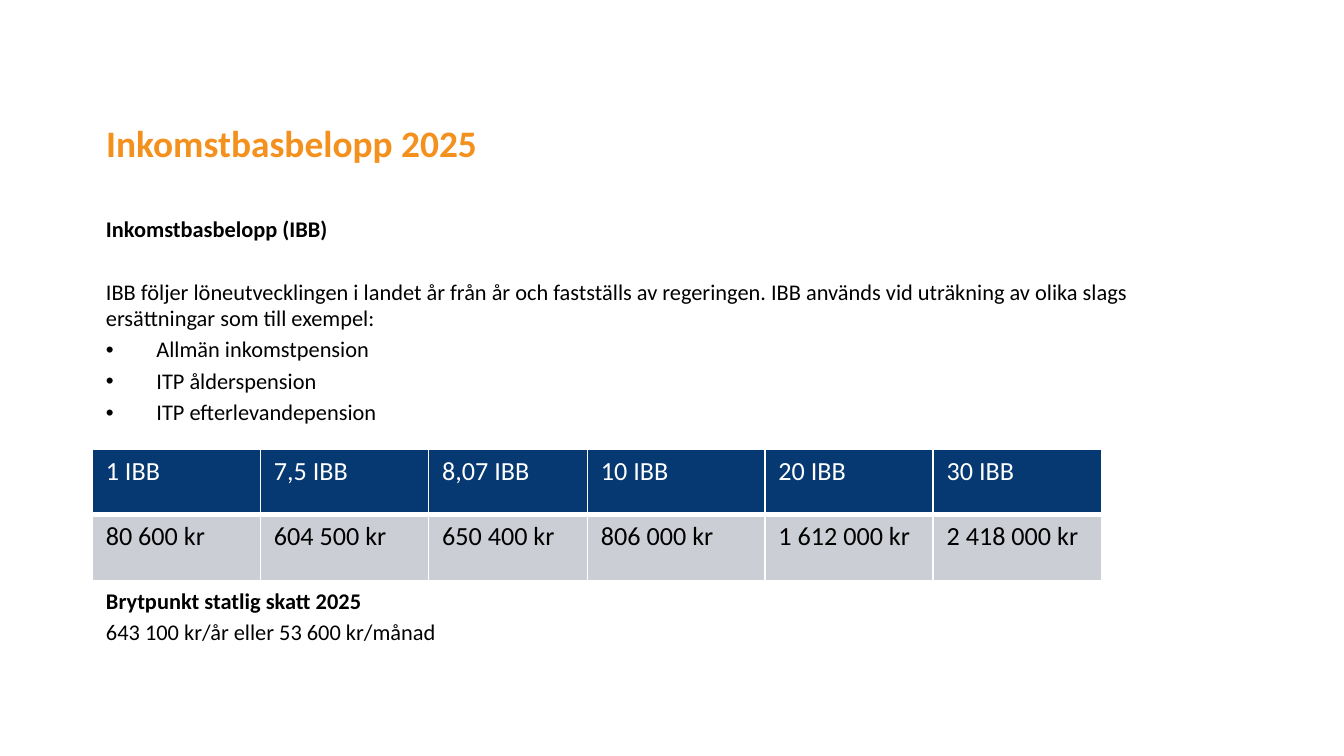
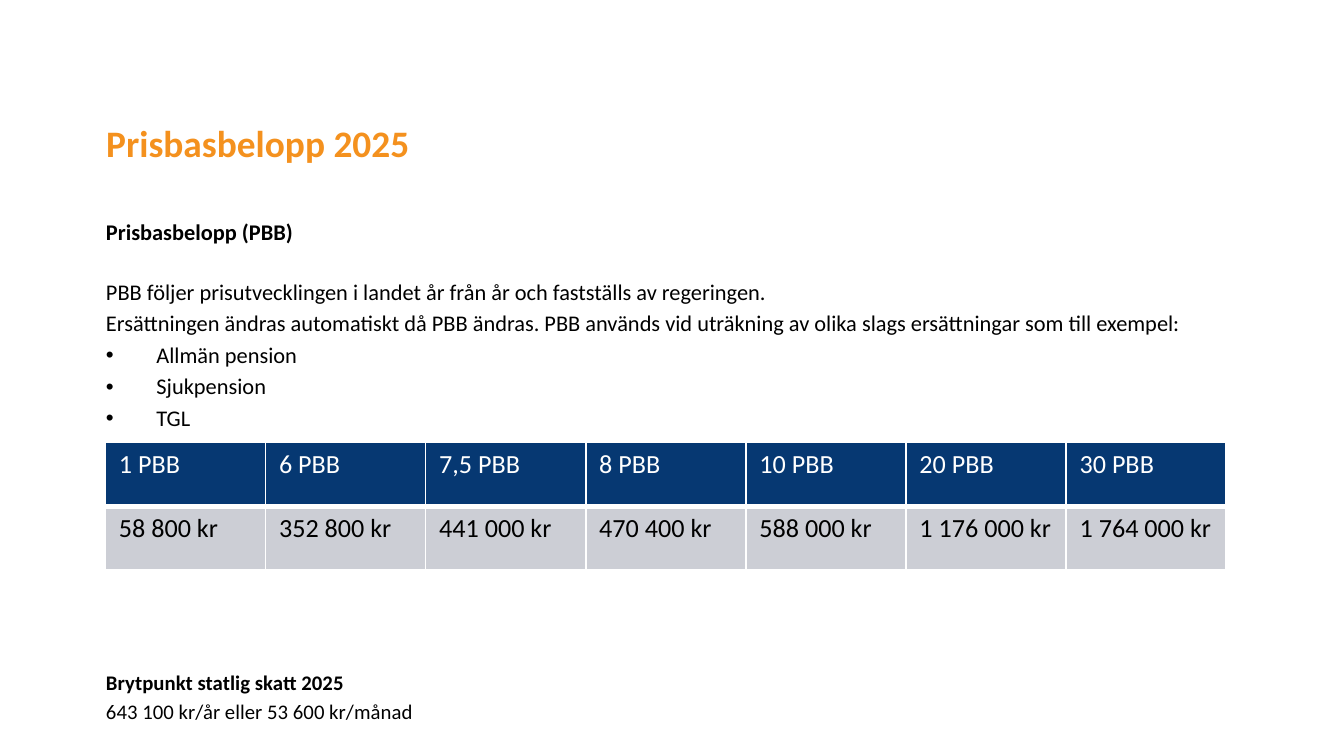
from pptx import Presentation
from pptx.dml.color import RGBColor
from pptx.enum import text as t
from pptx.oxml import parse_xml
from pptx.oxml.ns import nsdecls
from pptx.util import Pt

FONT = "Calibri"
ORANGE, NAVY, GREY, BLACK, WHITE = "F4911E", "063872", "CCCED5", "000000", "FFFFFF"
LEFT, WIDTH = 49.7, 620.6
INDENT = 27
LINE_SPACING = 0.97
TITLE_ONLY = 5
TAX_HEADING = "Brytpunkt statlig skatt 2025"
TAX_LIMIT = "643 100 kr/år eller 53 600 kr/månad"


def rgb(value):
    return RGBColor.from_string(value)


def set_font(font, size, color, bold=False):
    for name, value in dict(name=FONT, size=Pt(size), bold=bold).items():
        setattr(font, name, value)
    font.color.rgb = rgb(color)


def add_title(s, title):
    sp = s.shapes.title
    box = dict(left=LEFT, top=60.8, width=WIDTH, height=36.7)
    for name, value in box.items():
        setattr(sp, name, Pt(value))
    tf = sp.text_frame
    tf.text = title
    tf.vertical_anchor = t.MSO_ANCHOR.TOP
    tf.auto_size = t.MSO_AUTO_SIZE.NONE
    p = tf.paragraphs[0]
    p.alignment = t.PP_ALIGN.LEFT
    set_font(p.runs[0].font, 20, ORANGE, bold=True)


def add_bullet(p):
    pPr = p._p.get_or_add_pPr()
    pPr.set("marL", str(Pt(INDENT)))
    pPr.set("indent", str(-Pt(INDENT)))
    pPr.append(parse_xml(f'<a:buFont {nsdecls("a")} typeface="Arial"/>'))
    pPr.append(parse_xml(f'<a:buChar {nsdecls("a")} char="•"/>'))


def add_body(s, top, paragraphs):
    """Each paragraph is its text and a dict of size, bold, bullet and before."""
    sp = s.shapes.add_textbox(Pt(LEFT), Pt(top), Pt(WIDTH), Pt(267))
    tf = sp.text_frame
    tf.word_wrap = True
    for i, (words, style) in enumerate(paragraphs):
        p = tf.add_paragraph() if i else tf.paragraphs[0]
        p.line_spacing = LINE_SPACING
        p.space_before = Pt(style.get("before", 2.9) if i else 0)
        if style.get("bullet"):
            add_bullet(p)
        r = p.add_run()
        r.text = words
        set_font(r.font, style.get("size", 12), BLACK, style.get("bold", False))


def set_borders(cell, **widths):
    tcPr = cell._tc.get_or_add_tcPr()
    for side in "LRTB":
        tcPr.append(parse_xml(
            f'<a:ln{side} {nsdecls("a")} w="{Pt(widths.get(side, 1))}">'
            f'<a:solidFill><a:srgbClr val="{WHITE}"/></a:solidFill></a:ln{side}>'))


def add_amounts(s, left, top, col_widths, row_heights, amounts):
    """Table with the multiples as header row and the amounts below."""
    frame = s.shapes.add_table(2, len(amounts), Pt(left), Pt(top),
                               Pt(sum(col_widths)), Pt(sum(row_heights)))
    table = frame.table
    for row, height in zip(table.rows, row_heights):
        row.height = Pt(height)
    for col, width in zip(table.columns, col_widths):
        col.width = Pt(width)
    row_styles = [(NAVY, WHITE, {"B": 3}), (GREY, BLACK, {"T": 3})]
    for i, (fill, color, borders) in enumerate(row_styles):
        for j, pair in enumerate(amounts):
            cell = table.cell(i, j)
            cell.text = pair[i]
            set_borders(cell, **borders)
            cell.fill.solid()
            cell.fill.fore_color.rgb = rgb(fill)
            set_font(cell.text_frame.paragraphs[0].runs[0].font, 14, color)


def add_slide(prs, title, body_top, paragraphs, table):
    s = prs.slides.add_slide(prs.slide_layouts[TITLE_ONLY])
    add_body(s, body_top, paragraphs)
    add_title(s, title)
    add_amounts(s, **table)


def main():
    prs = Presentation()
    prs.slide_width, prs.slide_height = Pt(720), Pt(405)
    bullet = dict(bullet=True)

    add_slide(
        prs, "Inkomstbasbelopp 2025", 112.8,
        [("Inkomstbasbelopp (IBB)", dict(bold=True)),
         ("IBB följer löneutvecklingen i landet år från år och fastställs av regeringen. "
          "IBB används vid uträkning av olika slags ersättningar som till exempel:",
          dict(before=19.4)),
         ("Allmän inkomstpension", bullet),
         ("ITP ålderspension", bullet),
         ("ITP efterlevandepension", bullet),
         (TAX_HEADING, dict(bold=True, before=87)),
         (TAX_LIMIT, {})],
        dict(left=49.5, top=240.6, col_widths=[90.1, 90.1, 85.1, 95.1, 90.1, 90.1],
             row_heights=[34.9, 35.9],
             amounts=[("1 IBB", "80 600 kr"), ("7,5 IBB", "604 500 kr"),
                      ("8,07 IBB", "650 400 kr"), ("10 IBB", "806 000 kr"),
                      ("20 IBB", "1 612 000 kr"), ("30 IBB", "2 418 000 kr")]))

    add_slide(
        prs, "Prisbasbelopp 2025", 114.2,
        [("Prisbasbelopp (PBB)", dict(bold=True)),
         ("PBB följer prisutvecklingen i landet år från år och fastställs av regeringen.",
          dict(before=17.9)),
         ("Ersättningen ändras automatiskt då PBB ändras. PBB används vid uträkning av "
          "olika slags ersättningar som till exempel:", {}),
         ("Allmän pension", bullet),
         ("Sjukpension", bullet),
         ("TGL", bullet),
         (TAX_HEADING, dict(size=11.1, bold=True, before=128.6)),
         (TAX_LIMIT, dict(size=11.1, before=2.5))],
        dict(left=56.5, top=237, col_widths=[85.8] * 7, row_heights=[34.2, 34.2],
             amounts=[("1 PBB", "58 800 kr"), ("6 PBB", "352 800 kr"),
                      ("7,5 PBB", "441 000 kr"), ("8 PBB", "470 400 kr"),
                      ("10 PBB", "588 000 kr"), ("20 PBB", "1 176 000 kr"),
                      ("30 PBB", "1 764 000 kr")]))

    prs.save("out.pptx")


if __name__ == "__main__":
    main()
